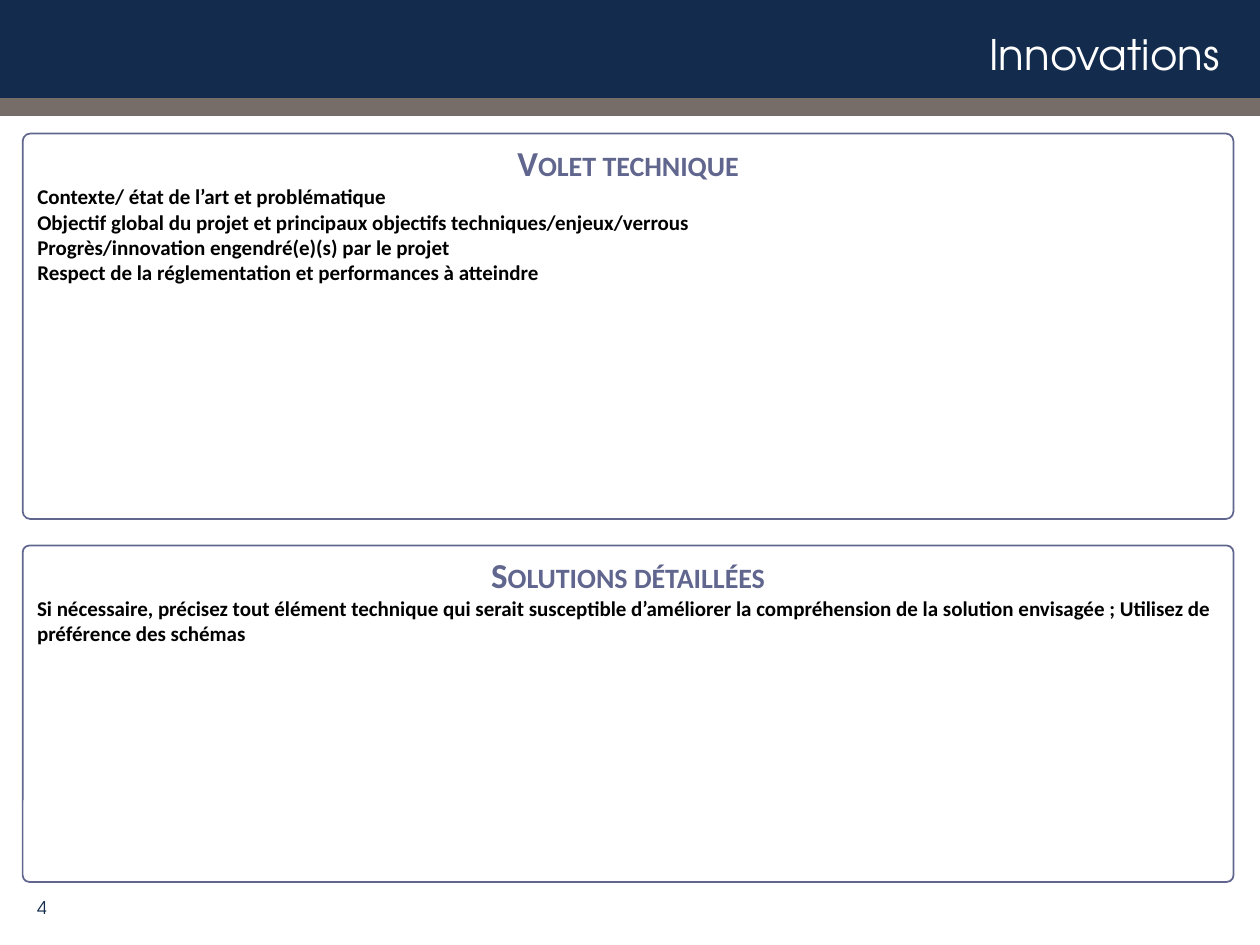
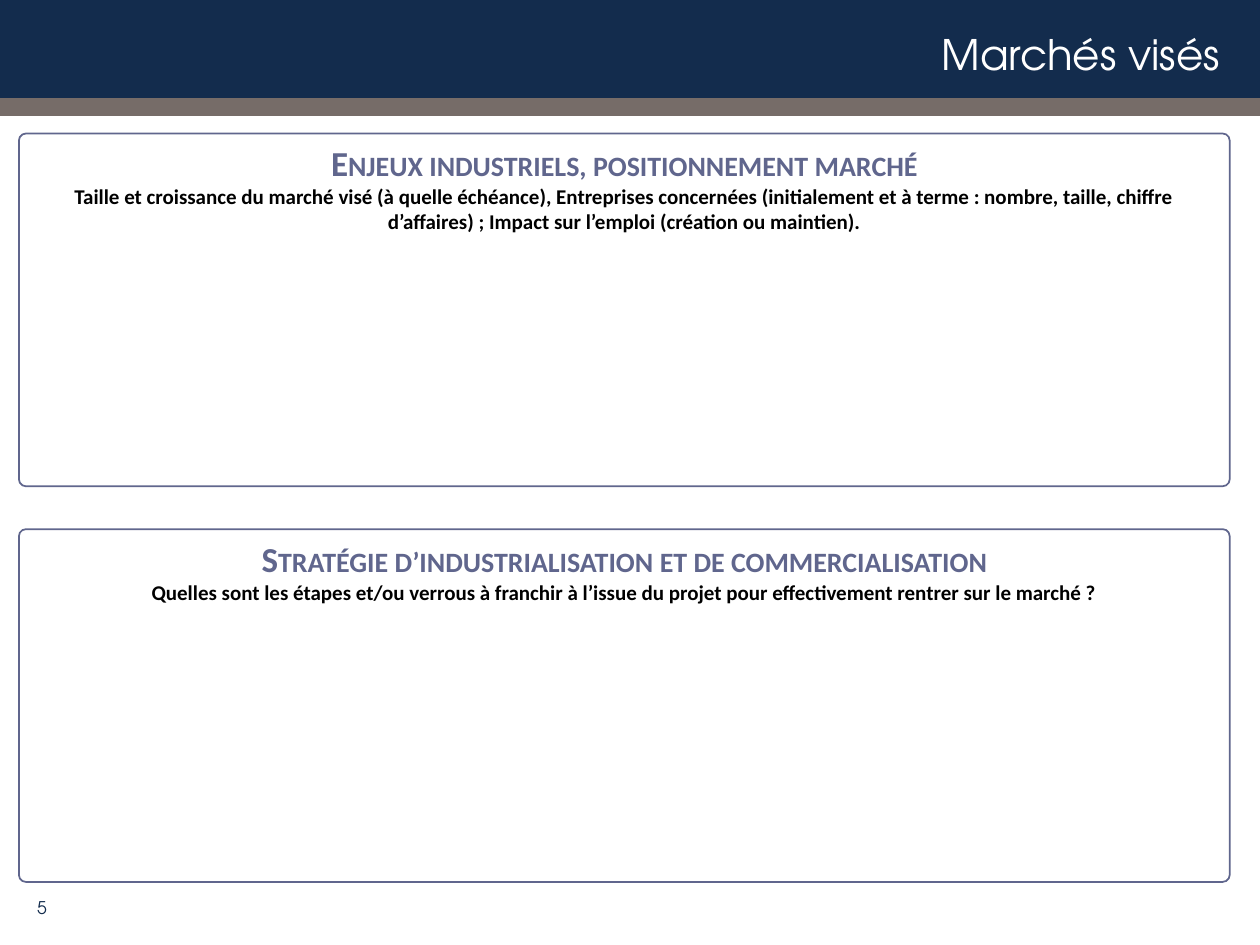
from pptx import Presentation
from pptx.dml.color import RGBColor
from pptx.enum.shapes import MSO_SHAPE as Shape
from pptx.enum.text import MSO_ANCHOR as Anchor, MSO_AUTO_SIZE as Fit, PP_ALIGN as Align
from pptx.util import Inches, Pt

NAVY = RGBColor(0x13, 0x2C, 0x4D)
TAUPE = RGBColor(0x76, 0x6C, 0x68)
SLATE = RGBColor(0x60, 0x66, 0x8D)
WHITE = RGBColor(0xFF, 0xFF, 0xFF)
BLACK = RGBColor(0, 0, 0)

WIDE, HIGH = 10, 7.5
TOP, BASE, SPAN = 1.06, 7, 9.61
FIRST = 4
BANDS = [(0, 0.9, NAVY), (0.78, 0.14, TAUPE)]
DISPLAY = "TeX Gyre Adventor"
TITLE = {"size": Pt(24), "name": DISPLAY, "bold": False}
PAGE = {"size": Pt(10), "name": DISPLAY}
HEAD = {"size": Pt(20), "name": "Calibri", "bold": True}
BODY = {"size": Pt(12), "name": "Calibri", "bold": True}

DECK = [
    {
        "title": "Innovations", "left": 0.18, "align": Align.LEFT,
        "panels": [
            {"high": 3.06, "fill": WHITE, "head": "Volet technique", "body": [
                "Contexte/ état de l’art et problématique",
                "Objectif global du projet et principaux objectifs techniques/enjeux/verrous",
                "Progrès/innovation engendré(e)(s) par le projet",
                "Respect de la réglementation et performances à atteindre",
            ]},
            {"high": 2.67, "fill": WHITE, "head": "Solutions détaillées", "body": [
                "Si nécessaire, précisez tout élément technique qui serait susceptible "
                "d’améliorer la compréhension de la solution envisagée ; "
                "Utilisez de préférence des schémas",
            ]},
        ],
    },
    {
        "title": "Marchés visés", "left": 0.15, "align": Align.CENTER,
        "panels": [
            {"high": 2.8, "fill": None, "head": "Enjeux industriels, positionnement marché", "body": [
                "Taille et croissance du marché visé (à quelle échéance), Entreprises "
                "concernées (initialement et à terme : nombre, taille, chiffre d’affaires) ; "
                "Impact sur l’emploi (création ou maintien).",
            ]},
            {"high": 2.8, "fill": WHITE,
             "head": "Stratégie d’industrialisation et de commercialisation", "body": [
                 "Quelles sont les étapes et/ou verrous à franchir à l’issue du projet "
                 "pour effectivement rentrer sur le marché ?",
             ]},
        ],
    },
]


def write(para, text, look, color, align):
    """Fill one paragraph with a styled run and return the run."""
    para.alignment = align
    run = para.add_run()
    run.text = text
    for key, value in look.items():
        setattr(run.font, key, value)
    run.font.color.rgb = color
    return run


def block(slide, kind, place, fill):
    """Add a flat shape without a line."""
    shape = slide.shapes.add_shape(kind, *map(Inches, place))
    shape.shadow.inherit = False
    if fill is None:
        shape.fill.background()
    else:
        shape.fill.solid()
        shape.fill.fore_color.rgb = fill
    shape.line.fill.background()
    return shape


def frame(slide, title, page):
    """Draw the bands, the title and the page number."""
    head = slide.shapes.title
    for top, high, color in BANDS:
        band = block(slide, Shape.RECTANGLE, (0, top, WIDE, high), color)
        head.element.addprevious(band.element)
    head.left, head.top, head.width, head.height = map(Inches, (0.15, 0.14, 9.63, 0.58))
    foot = slide.shapes.add_textbox(*map(Inches, (-0.04, BASE, 0.51, 0.4)))
    for box, text, look, color in ((head, title, TITLE, WHITE), (foot, str(page), PAGE, NAVY)):
        area = box.text_frame
        area.auto_size = Fit.NONE
        area.word_wrap = True
        area.vertical_anchor = Anchor.MIDDLE
        write(area.paragraphs[0], text, look, color, Align.RIGHT)


def panel(slide, left, top, align, item):
    """Draw a rounded panel with its heading and body lines."""
    card = block(slide, Shape.ROUNDED_RECTANGLE, (left, top, SPAN, item["high"]), item["fill"])
    card.adjustments[0] = 0.02
    card.line.color.rgb = SLATE
    card.line.width = Pt(1)
    area = card.text_frame
    area.word_wrap = True
    area.vertical_anchor = Anchor.TOP
    head = write(area.paragraphs[0], item["head"], HEAD, SLATE, Align.CENTER)
    head.font.element.set("cap", "small") if hasattr(head.font, "element") else \
        head._r.get_or_add_rPr().set("cap", "small")
    for line in item["body"]:
        write(area.add_paragraph(), line, BODY, BLACK, align)


def main():
    """Build the deck."""
    deck = Presentation()
    deck.slide_width, deck.slide_height = Inches(WIDE), Inches(HIGH)
    for page, data in enumerate(DECK, FIRST):
        slide = deck.slides.add_slide(deck.slide_layouts[5])
        frame(slide, data["title"], page)
        upper, lower = data["panels"]
        for top, item in ((BASE - lower["high"], lower), (TOP, upper)):
            panel(slide, data["left"], top, data["align"], item)
    deck.save("out.pptx")


if __name__ == "__main__":
    main()
